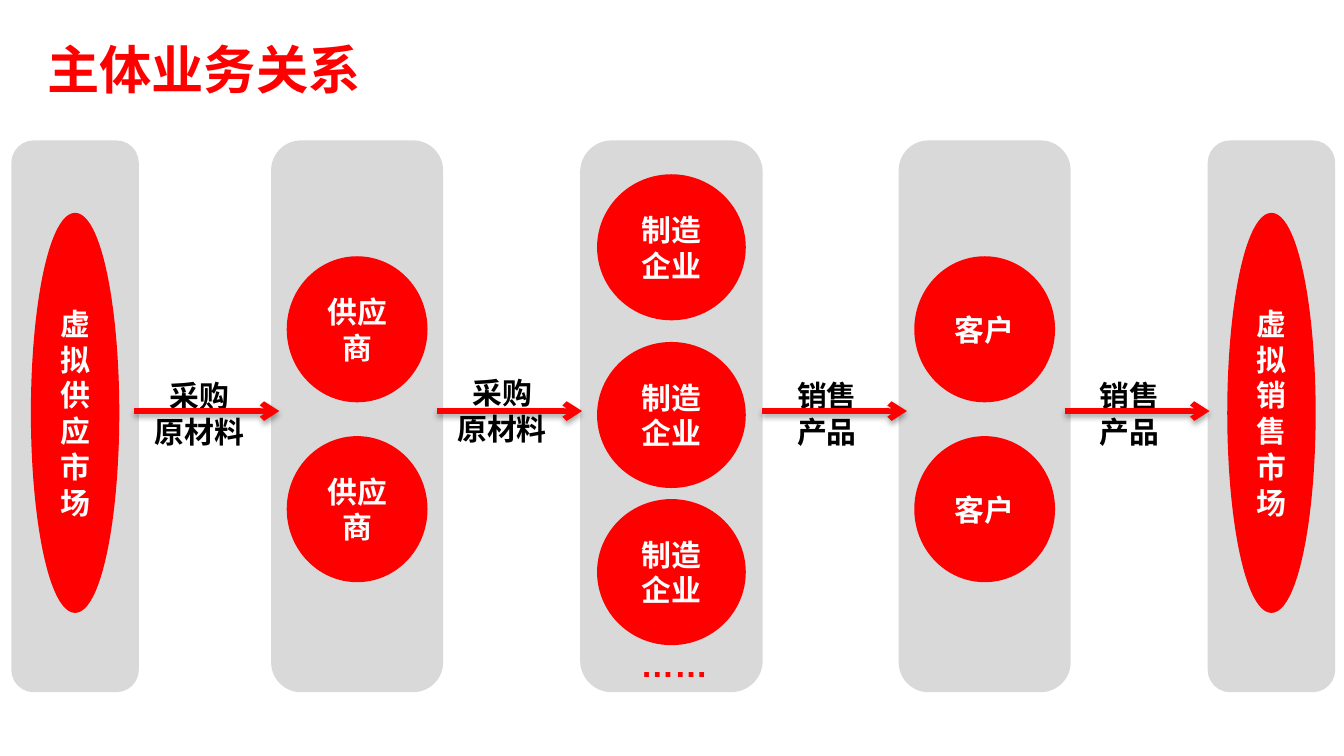
from dataclasses import dataclass

from pptx import Presentation
from pptx.dml.color import RGBColor
from pptx.enum import shapes, text
from pptx.oxml import parse_xml
from pptx.oxml.ns import nsdecls, qn
from pptx.util import Cm, Pt


@dataclass(frozen=True)
class Theme:
    red: RGBColor = RGBColor(0xFF, 0, 0)
    grey: RGBColor = RGBColor(0xD9, 0xD9, 0xD9)
    white: RGBColor = RGBColor(0xFF, 0xFF, 0xFF)
    black: RGBColor = RGBColor(0, 0, 0)
    font: str = "Calibri"
    dots_font: str = "Arial"
    title_size: int = 28
    dots_size: int = 18
    label_size: int = 16


THEME = Theme()
PANEL_TOP, PANEL_HEIGHT = 2.69, 10.36
ARROW_Y, ARROW_LENGTH = 7.77, 2.74

# Each party: panel left, panel width, ellipse width, ellipse height, ellipse tops, name
PARTIES = [
    (11.0, 3.38, 2.74, 2.69, (3.33, 6.5, 9.47), "制造企业"),
    (5.16, 3.18, 2.59, 2.69, (4.88, 8.28), "供应商"),
    (22.86, 2.34, 1.6, 7.49, (4.06,), "虚拟销售市场"),
    (17.02, 3.18, 2.59, 2.69, (4.88, 8.28), "客户"),
    (0.25, 2.34, 1.6, 7.49, (4.06,), "虚拟供应市场"),
]

# Each flow: left, label top, label lines
FLOWS = [
    (2.54, 7.01, ("采购", "原材料")),
    (8.26, 6.96, ("采购", "原材料")),
    (14.4, 7.01, ("销售", "产品")),
    (20.12, 7.01, ("销售", "产品")),
]


def write(frame, lines, size, color, font=THEME.font, align=None):
    for number, line in enumerate(lines):
        para = frame.add_paragraph() if number else frame.paragraphs[0]
        para.alignment = align
        span = para.add_run()
        span.text = line
        span.font.name = font
        span.font.size = Pt(size)
        span.font.bold = True
        span.font.color.rgb = color


def add_title(page, words):
    title = page.shapes.title
    title.left, title.top, title.width, title.height = Cm(0.64), Cm(0.58), Cm(19.25), Cm(1.17)
    title.text_frame.vertical_anchor = text.MSO_ANCHOR.TOP
    write(title.text_frame, [words], THEME.title_size, THEME.red,
          align=text.PP_ALIGN.LEFT)


def add_block(parent, kind, left, top, width, height, color):
    block = parent.shapes.add_shape(kind, Cm(left), Cm(top), Cm(width), Cm(height))
    block.shadow.inherit = False
    block.fill.solid()
    block.fill.fore_color.rgb = color
    block.line.color.rgb = color
    block.line.width = Pt(2)
    return block


def add_label(parent, left, top, width, height, lines, size, color, **style):
    box = parent.shapes.add_textbox(Cm(left), Cm(top), Cm(width), Cm(height))
    box.text_frame.word_wrap = True
    box.text_frame.auto_size = text.MSO_AUTO_SIZE.SHAPE_TO_FIT_TEXT
    write(box.text_frame, lines, size, color, **style)


def add_party(page, left, width, oval_width, oval_height, tops, name):
    """Add a grey panel with its named ellipses centred across it, as one group."""
    group = page.shapes.add_group_shape()
    add_block(group, shapes.MSO_SHAPE.ROUNDED_RECTANGLE,
              left, PANEL_TOP, width, PANEL_HEIGHT, THEME.grey)
    oval_left = left + (width - oval_width) / 2
    for top in tops:
        oval = add_block(group, shapes.MSO_SHAPE.OVAL,
                         oval_left, top, oval_width, oval_height, THEME.red)
        oval.text_frame.word_wrap = True
        oval.text_frame.vertical_anchor = text.MSO_ANCHOR.MIDDLE
        write(oval.text_frame, [name], THEME.label_size, THEME.white,
              align=text.PP_ALIGN.CENTER)
    return group


def add_arrow(page, left):
    arrow = page.shapes.add_connector(
        shapes.MSO_CONNECTOR.STRAIGHT,
        Cm(left), Cm(ARROW_Y), Cm(left + ARROW_LENGTH), Cm(ARROW_Y))
    arrow.line.color.rgb = THEME.red
    arrow.line.width = Pt(3)
    properties = arrow.element.spPr
    properties.find(qn("a:ln")).append(
        parse_xml(f'<a:tailEnd {nsdecls("a")} type="arrow"/>'))
    properties.append(parse_xml(
        f'<a:effectLst {nsdecls("a")}>'
        f'<a:outerShdw blurRad="{Pt(3.1)}" dist="{Pt(1.8)}" dir="5400000" rotWithShape="0">'
        '<a:srgbClr val="000000"><a:alpha val="35000"/></a:srgbClr>'
        '</a:outerShdw></a:effectLst>'))


def add_flow(page, left, top, lines):
    add_label(page, left, top, 2.46, 1.63, lines, THEME.label_size, THEME.black,
              align=text.PP_ALIGN.CENTER)
    add_arrow(page, left)


def main():
    deck = Presentation()
    deck.slide_width, deck.slide_height = Cm(25.4), Cm(14.29)
    page = deck.slides.add_slide(deck.slide_layouts.get_by_name("Title Only"))

    add_title(page, "主体业务关系")
    groups = [add_party(page, *party) for party in PARTIES]
    add_label(groups[0], 11.86, 12.04, 2.21, 1.02, ["……"],
              THEME.dots_size, THEME.red, font=THEME.dots_font)
    for flow in FLOWS:
        add_flow(page, *flow)

    deck.save("out.pptx")


if __name__ == "__main__":
    main()
